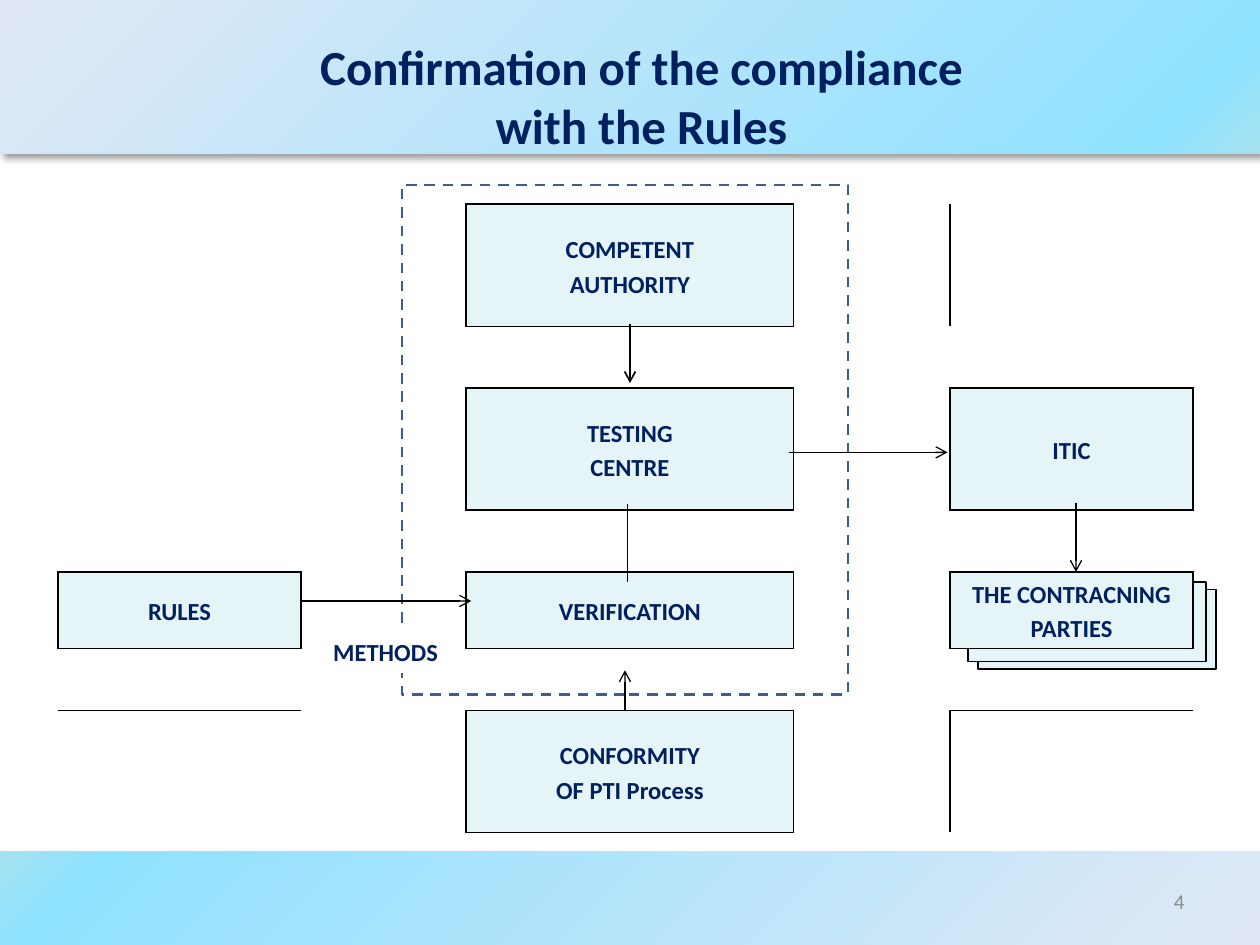
from typing import NamedTuple, Optional

from lxml.etree import SubElement
from pptx import Presentation
from pptx.dml.color import RGBColor
from pptx.enum.dml import MSO_LINE_DASH_STYLE as Dash
from pptx.enum.shapes import MSO_CONNECTOR as Connector, MSO_SHAPE as Preset
from pptx.enum.text import MSO_ANCHOR as Anchor, MSO_AUTO_SIZE as AutoSize, PP_ALIGN as Align
from pptx.oxml import parse_xml
from pptx.oxml.ns import nsdecls, qn
from pptx.util import Emu, Inches, Pt

WIDTH, HEIGHT = Inches(10), Inches(7.5)
NAVY, BLACK, PALE, WHITE, GREY, SLATE = "002060", "000000", "E5F4F7", "FFFFFF", "8C8C8C", "3A5F8C"
GLOW = [(0, "A4E2EE"), (8, "8FE2FF"), (100, "E1E8F5")]
NO_GRID_STYLE = "{2D5ABB26-0587-4C30-8999-92F81FD0307C}"


class Area(NamedTuple):
    """A rectangle in percent of the slide's width and height."""
    left: float
    top: float
    width: float
    height: float


class Link(NamedTuple):
    """A connector with its ends in percent of the slide."""
    x1: float
    y1: float
    x2: float
    y2: float
    weight: float = 0.75
    arrow: bool = True


COLUMNS = [19.3, 13.1, 26, 12.4, 19.3]
ROWS = [12.93, 6.53, 12.93, 6.53, 8.13, 6.53, 12.93]
CHART_AREA = Area(4.6, 21.6, sum(COLUMNS), sum(ROWS))
BOXES = {
    (0, 2): ["COMPETENT", "AUTHORITY"],
    (2, 2): ["TESTING", "CENTRE"],
    (2, 4): ["ITIC"],
    (4, 0): ["RULES"],
    (4, 2): ["VERIFICATION"],
    (4, 4): ["THE CONTRACNING PARTIES"],
    (6, 2): ["CONFORMITY", "OF PTI Process"],
}
SIDES = {"lnL": (0, -1), "lnR": (0, 1), "lnT": (-1, 0), "lnB": (1, 0)}
PARTY_SHEETS = [Area(77.6, 62.4, 18.9, 8.4), Area(76.8, 61.6, 18.9, 8.4)]
LINKS = [
    Link(49.6, 75.2, 49.6, 70.93),
    Link(24, 63.6, 37.4, 63.6),
    Link(62.6, 47.87, 75.2, 47.87),
    Link(85.4, 53.2, 85.4, 60.53),
    Link(49.8, 53.33, 49.8, 61.6, arrow=False),
    Link(50, 34.27, 50, 40.53, weight=1),
]


def across(percent: float) -> Emu:
    """Turn a share of the slide's width into a length."""
    return Emu(round(WIDTH * percent / 100))


def down(percent: float) -> Emu:
    """Turn a share of the slide's height into a length."""
    return Emu(round(HEIGHT * percent / 100))


def place(area: Area) -> tuple:
    """Return left, top, width and height as lengths."""
    return across(area.left), down(area.top), across(area.width), down(area.height)


def colour(code: str) -> RGBColor:
    """Turn a hex string into a colour."""
    return RGBColor.from_string(code)


def write(frame, lines: list, size: float, ink: str, bold: bool = True,
          align=Align.CENTER, spacing: Optional[float] = None) -> None:
    """Fill a text frame with one paragraph for each line."""
    for index, line in enumerate(lines):
        paragraph = frame.add_paragraph() if index else frame.paragraphs[0]
        paragraph.alignment = align
        paragraph.line_spacing = spacing
        for part, words in enumerate(line.split("\n")):
            if part:
                paragraph.add_line_break()
            run = paragraph.add_run()
            run.text = words
            run.font.name, run.font.size, run.font.bold = "Calibri", Pt(size), bold
            run.font.color.rgb = colour(ink)


def add_panel(slide, area: Area, fill: Optional[str] = None, line: Optional[str] = None,
              weight: float = 1):
    """Draw a plain rectangle without a shadow."""
    panel = slide.shapes.add_shape(Preset.RECTANGLE, *place(area))
    panel.shadow.inherit = False
    if fill:
        panel.fill.solid()
        panel.fill.fore_color.rgb = colour(fill)
    else:
        panel.fill.background()
    if line:
        panel.line.color.rgb = colour(line)
        panel.line.width = Pt(weight)
    else:
        panel.line.fill.background()
    return panel


def add_band(slide, area: Area, focus: dict):
    """Draw a band whose gradient spreads from one corner."""
    band = add_panel(slide, area)
    stops = "".join(f'<a:gs pos="{at * 1000}"><a:srgbClr val="{code}"/></a:gs>' for at, code in GLOW)
    corner = " ".join(f'{side}="100000"' for side in focus)
    gradient = parse_xml(
        f'<a:gradFill {nsdecls("a")} rotWithShape="1"><a:gsLst>{stops}</a:gsLst>'
        f'<a:path path="circle"><a:fillToRect {corner}/></a:path></a:gradFill>')
    properties = band._element.spPr
    properties.replace(properties.find(qn("a:noFill")), gradient)
    return band


def cast_shadow(shape) -> None:
    """Give a shape a soft shadow to the lower right."""
    effects = shape._element.spPr.find(qn("a:effectLst"))
    effects.append(parse_xml(
        f'<a:outerShdw {nsdecls("a")} blurRad="50800" dist="38100" dir="2700000" algn="tl" '
        f'rotWithShape="0"><a:srgbClr val="{BLACK}"><a:alpha val="40000"/></a:srgbClr></a:outerShdw>'))


def add_link(slide, link: Link) -> None:
    """Draw a straight line, with an arrowhead at its end if wanted."""
    connector = slide.shapes.add_connector(
        Connector.STRAIGHT, across(link.x1), down(link.y1), across(link.x2), down(link.y2))
    connector.line.color.rgb = colour(BLACK)
    connector.line.width = Pt(link.weight)
    if link.arrow:
        SubElement(connector.line._get_or_add_ln(), qn("a:tailEnd"), type="arrow")
    SubElement(connector._element.spPr, qn("a:effectLst"))


def add_flow_table(slide) -> None:
    """Draw the grid whose filled cells are the boxes of the flow."""
    frame = slide.shapes.add_table(len(ROWS), len(COLUMNS), *place(CHART_AREA))
    table = frame.table
    table.first_row = table.horz_banding = False
    table._tbl.tblPr.find(qn("a:tableStyleId")).text = NO_GRID_STYLE
    for column, width in zip(table.columns, COLUMNS):
        column.width = across(width)
    for row, height in zip(table.rows, ROWS):
        row.height = down(height)
    for r in range(len(ROWS)):
        for c in range(len(COLUMNS)):
            cell = table.cell(r, c)
            properties = cell._tc.get_or_add_tcPr()
            for side, (dr, dc) in SIDES.items():
                if (r, c) in BOXES or (r + dr, c + dc) in BOXES:
                    properties.append(parse_xml(
                        f'<a:{side} {nsdecls("a")} w="12700"><a:solidFill>'
                        f'<a:srgbClr val="{BLACK}"/></a:solidFill></a:{side}>'))
            if (r, c) not in BOXES:
                cell.fill.background()
                continue
            cell.fill.solid()
            cell.fill.fore_color.rgb = colour(PALE)
            cell.vertical_anchor = Anchor.MIDDLE
            cell.margin_left = cell.margin_right = Inches(0.06)
            cell.margin_top = cell.margin_bottom = 0
            write(cell.text_frame, BOXES[r, c], 14, NAVY, spacing=1.15)


def main() -> None:
    """Build the slide and save it."""
    deck = Presentation()
    deck.slide_width, deck.slide_height = WIDTH, HEIGHT
    slide = deck.slides.add_slide(deck.slide_layouts[5])
    for sheet in PARTY_SHEETS:
        add_panel(slide, sheet, PALE, BLACK)
    add_flow_table(slide)
    cast_shadow(add_band(slide, Area(0, 0, 100, 16.27), focus="lt"))
    add_band(slide, Area(0, 90.13, 100, 9.87), focus="rb")

    title = slide.shapes.title
    slide.shapes._spTree.append(title._element)
    title.left, title.top, title.width, title.height = place(Area(5.9, 4.8, 90, 10.53))
    title.text_frame.auto_size = AutoSize.NONE
    title.text_frame.vertical_anchor = Anchor.MIDDLE
    write(title.text_frame, ["Confirmation of the compliance\nwith the Rules"], 28, NAVY)

    page = slide.shapes.add_textbox(*place(Area(71.7, 92.67, 23.3, 5.33))).text_frame
    page.word_wrap, page.vertical_anchor = True, Anchor.MIDDLE
    write(page, ["4"], 12, GREY, bold=False, align=Align.RIGHT)

    scope = add_panel(slide, Area(31.9, 19.6, 35.4, 53.87), line=SLATE, weight=1.5)
    scope.line.dash_style = Dash.DASH
    for link in LINKS:
        add_link(slide, link)
    methods = add_panel(slide, Area(24.7, 66.67, 11.8, 4.53), WHITE)
    write(methods.text_frame, ["METHODS"], 14, NAVY)
    deck.save("out.pptx")


if __name__ == "__main__":
    main()
